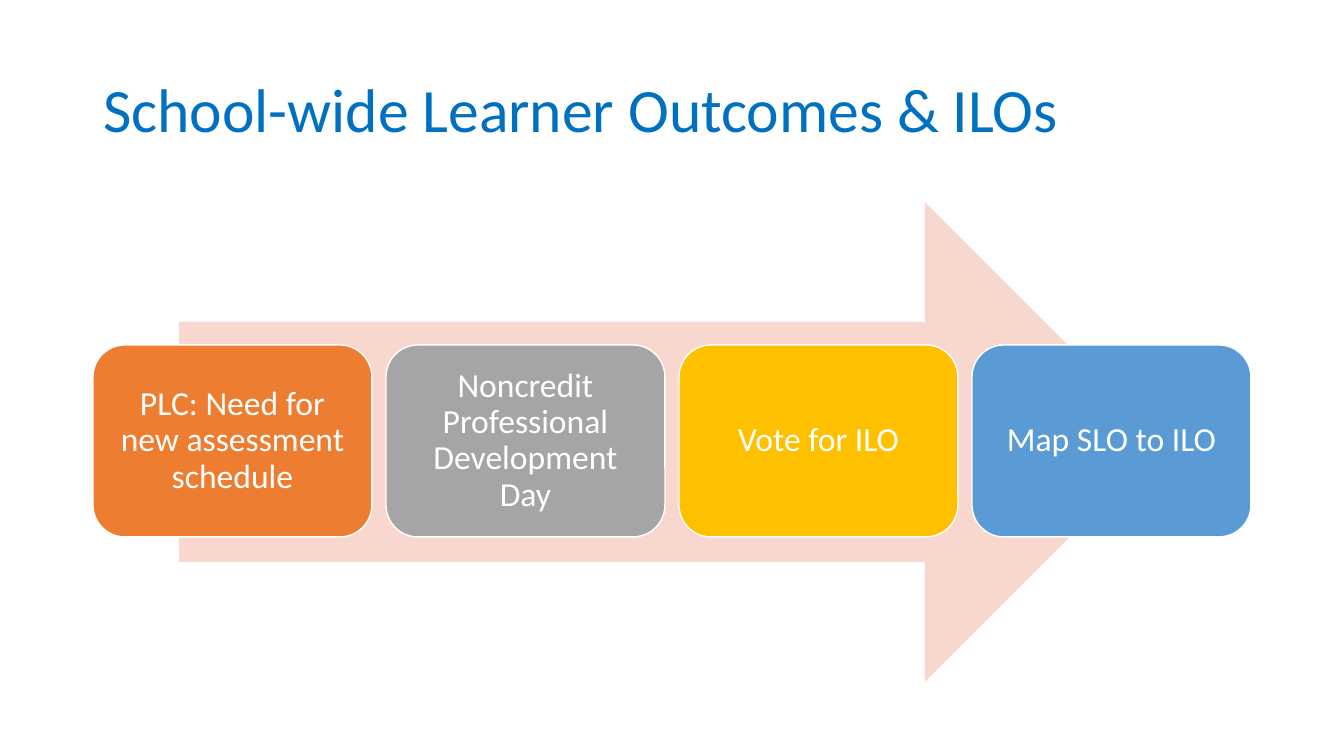
from pptx import Presentation
from pptx import util as u
from pptx.dml.color import RGBColor
from pptx.enum import shapes, text

TITLE_BLUE = RGBColor(0x00, 0x70, 0xC0)
ARROW_PINK = RGBColor(0xF8, 0xD7, 0xCE)
ORANGE = RGBColor(0xED, 0x7D, 0x31)
GRAY = RGBColor(0xA5, 0xA5, 0xA5)
GOLD = RGBColor(0xFF, 0xC0, 0x00)
BLUE = RGBColor(0x5B, 0x9B, 0xD5)
WHITE = RGBColor(0xFF, 0xFF, 0xFF)

TITLE = "School-wide Learner Outcomes & ILOs"
STEPS = [
    ("PLC: Need for new assessment schedule", ORANGE),
    ("Noncredit Professional Development Day", GRAY),
    ("Vote for ILO", GOLD),
    ("Map SLO to ILO", BLUE),
]

# Lengths in px: left, top, width, height
SLIDE_SIZE = (1344, 756)
TITLE_BOX = (93, 40, 1159, 146)
ARROW_BOX = (179, 202, 986, 480)
STEP_LEFT, STEP_TOP, STEP_WIDTH, STEP_HEIGHT = 93, 345, 279, 192
STEP_GAP = 14
STEP_MARGIN = 10


def px(length):
    return u.Emu(round(length * 914400 / 100.8))


def write(frame, words, size, color, alignment):
    frame.text = words
    frame.word_wrap = True
    frame.auto_size = text.MSO_AUTO_SIZE.NONE
    frame.vertical_anchor = text.MSO_ANCHOR.MIDDLE
    paragraph = frame.paragraphs[0]
    paragraph.alignment = alignment
    paragraph.line_spacing = 0.9
    font = paragraph.runs[0].font
    font.name, font.size, font.color.rgb = "Calibri", u.Pt(size), color


def add_filled(slide, kind, box, color):
    shape = slide.shapes.add_shape(kind, *map(px, box))
    shape.shadow.inherit = False
    shape.fill.solid()
    shape.fill.fore_color.rgb = color
    return shape


def add_step(slide, index, words, color):
    left = STEP_LEFT + index * (STEP_WIDTH + STEP_GAP)
    box = (left, STEP_TOP, STEP_WIDTH, STEP_HEIGHT)
    step = add_filled(slide, shapes.MSO_SHAPE.ROUNDED_RECTANGLE, box, color)
    step.line.color.rgb = WHITE
    step.line.width = u.Pt(1)
    frame = step.text_frame
    frame.margin_left = frame.margin_right = px(STEP_MARGIN)
    frame.margin_top = frame.margin_bottom = px(STEP_MARGIN)
    write(frame, words, 24, WHITE, text.PP_ALIGN.CENTER)


def main():
    presentation = Presentation()
    presentation.slide_width, presentation.slide_height = map(px, SLIDE_SIZE)
    slide = presentation.slides.add_slide(presentation.slide_layouts[5])

    title = slide.shapes.title
    title.left, title.top, title.width, title.height = map(px, TITLE_BOX)
    write(title.text_frame, TITLE, 44, TITLE_BLUE, text.PP_ALIGN.LEFT)

    arrow = add_filled(slide, shapes.MSO_SHAPE.RIGHT_ARROW, ARROW_BOX, ARROW_PINK)
    arrow.line.fill.background()
    for index, (words, color) in enumerate(STEPS):
        add_step(slide, index, words, color)

    presentation.save("out.pptx")


if __name__ == "__main__":
    main()
